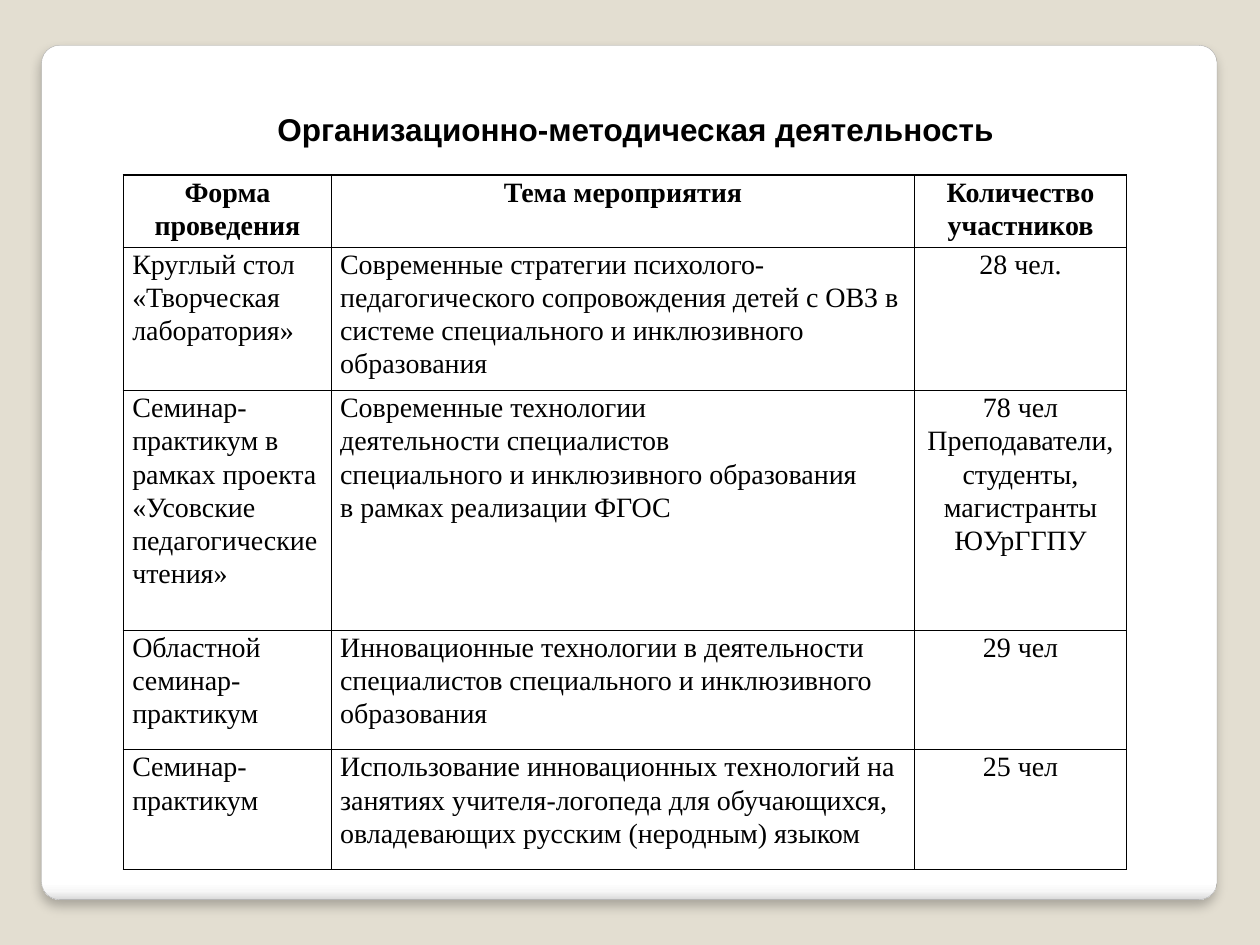
from dataclasses import dataclass

from lxml import etree
from pptx import Presentation
from pptx.dml.color import RGBColor
from pptx.enum.shapes import MSO_SHAPE
from pptx.enum.text import MSO_ANCHOR, PP_ALIGN
from pptx.oxml import parse_xml
from pptx.oxml.ns import nsdecls, qn
from pptx.util import Inches, Pt

ROUND_RECT = MSO_SHAPE.ROUNDED_RECTANGLE
MIDDLE = MSO_ANCHOR.MIDDLE
LEFT, CENTER = PP_ALIGN.LEFT, PP_ALIGN.CENTER
TITLE_ONLY = 5


@dataclass(frozen=True)
class Theme:
    background: str = "E3DED1"
    panel_line: str = "A4A4A4"
    panel_stops: tuple = ((0, "FFFFFF"), (98, "FFFFFF"), (99, "F7F7F7"), (100, "DADADA"))
    ink: str = "000000"
    title_font: str = "Arial"
    title_size: int = 18
    table_font: str = "Times New Roman"
    table_size: int = 16
    outer_border: float = 1
    inner_border: float = 0.5


THEME = Theme()
TITLE = "Организационно-методическая деятельность"
COLUMN_WIDTHS = (1.65, 4.63, 1.68)
ROW_HEIGHTS = (0.57, 1.14, 1.9, 0.95, 0.95)
EVENTS = (
    ("Форма проведения", "Тема мероприятия", "Количество участников"),
    ("Круглый стол «Творческая лаборатория»",
     "Современные стратегии психолого-педагогического сопровождения детей с ОВЗ "
     "в системе специального и инклюзивного образования",
     "28 чел."),
    ("Семинар-практикум в рамках проекта «Усовские педагогические чтения»",
     "Современные технологии\nдеятельности специалистов\n"
     "специального и инклюзивного образования\nв рамках реализации ФГОС",
     "78 чел\nПреподаватели, студенты, магистранты ЮУрГГПУ"),
    ("Областной семинар-практикум",
     "Инновационные технологии в деятельности специалистов специального "
     "и инклюзивного образования",
     "29 чел"),
    ("Семинар-практикум",
     "Использование инновационных технологий на занятиях учителя-логопеда "
     "для обучающихся, овладевающих русским (неродным) языком",
     "25 чел"),
)


def rgb(value):
    return RGBColor.from_string(value)


def format_paragraph(p, font, size, bold, align):
    p.alignment = align
    p.font.name = font
    p.font.size = Pt(size)
    p.font.bold = bold
    p.font.color.rgb = rgb(THEME.ink)


def add_panel(s):
    """Add the rounded sheet with a shaded lower edge, behind everything else."""
    sp = s.shapes.add_shape(ROUND_RECT, Inches(0.33), Inches(0.36), Inches(9.33), Inches(6.78))
    sp.adjustments[0] = 0.021
    sp.fill.gradient()
    sp.fill.gradient_angle = 270
    sp.line.color.rgb = rgb(THEME.panel_line)
    sp.line.width = Pt(0.16)
    stops = sp._element.spPr.find(".//" + qn("a:gsLst"))
    for stop in list(stops):
        stops.remove(stop)
    for position, color in THEME.panel_stops:
        stop = etree.SubElement(stops, qn("a:gs"), pos=str(position * 1000))
        etree.SubElement(stop, qn("a:srgbClr"), val=color)
    sp._element.spPr.append(parse_xml(
        f'<a:effectLst {nsdecls("a")}>'
        f'<a:outerShdw blurRad="{Pt(6)}" dist="{Pt(4)}" dir="5400000" algn="t" rotWithShape="0">'
        f'<a:srgbClr val="{THEME.ink}"><a:alpha val="25000"/></a:srgbClr>'
        '</a:outerShdw></a:effectLst>'))
    s.shapes._spTree.insert(2, sp._element)


def set_title(s):
    title = s.shapes.title
    title.left, title.top = Inches(0.83), Inches(0.82)
    title.width, title.height = Inches(8.43), Inches(0.4)
    tf = title.text_frame
    tf.text = TITLE
    tf.word_wrap = True
    tf.vertical_anchor = MIDDLE
    format_paragraph(tf.paragraphs[0], THEME.title_font, THEME.title_size, True, CENTER)


def set_borders(cell, widths):
    """Draw cell borders; widths maps a:lnL, a:lnR, a:lnT and a:lnB to points."""
    tc_pr = cell._tc.get_or_add_tcPr()
    for index, (tag, width) in enumerate(widths.items()):
        tc_pr.insert(index, parse_xml(
            f'<{tag} {nsdecls("a")} w="{Pt(width)}"><a:solidFill>'
            f'<a:srgbClr val="{THEME.ink}"/></a:solidFill></{tag}>'))


def fill_cell(cell, text, bold, align):
    cell.fill.background()
    cell.margin_left = cell.margin_right = Inches(0.07)
    cell.margin_top = cell.margin_bottom = 0
    cell.text = text
    for p in cell.text_frame.paragraphs:
        format_paragraph(p, THEME.table_font, THEME.table_size, bold, align)
        p.line_spacing = 1.07


def add_events_table(s):
    row_count, column_count = len(ROW_HEIGHTS), len(COLUMN_WIDTHS)
    table = s.shapes.add_table(
        row_count, column_count, Inches(0.98), Inches(1.39),
        Inches(sum(COLUMN_WIDTHS)), Inches(sum(ROW_HEIGHTS))).table
    table.horz_banding = table.first_row = False
    for column, width in zip(table.columns, COLUMN_WIDTHS):
        column.width = Inches(width)
    for row, height in zip(table.rows, ROW_HEIGHTS):
        row.height = Inches(height)
    for i, event in enumerate(EVENTS):
        for j, text in enumerate(event):
            cell = table.cell(i, j)
            is_header = i == 0
            centered = is_header or j == column_count - 1
            fill_cell(cell, text, is_header, CENTER if centered else LEFT)
            on_edge = {"a:lnL": j == 0, "a:lnR": j == column_count - 1,
                       "a:lnT": i == 0, "a:lnB": i == row_count - 1}
            set_borders(cell, {tag: THEME.outer_border if edge else THEME.inner_border
                               for tag, edge in on_edge.items()})


def main():
    prs = Presentation()
    prs.slide_width, prs.slide_height = Inches(10), Inches(7.5)
    s = prs.slides.add_slide(prs.slide_layouts[TITLE_ONLY])
    s.background.fill.solid()
    s.background.fill.fore_color.rgb = rgb(THEME.background)
    add_panel(s)
    set_title(s)
    add_events_table(s)
    prs.save("out.pptx")


if __name__ == "__main__":
    main()
